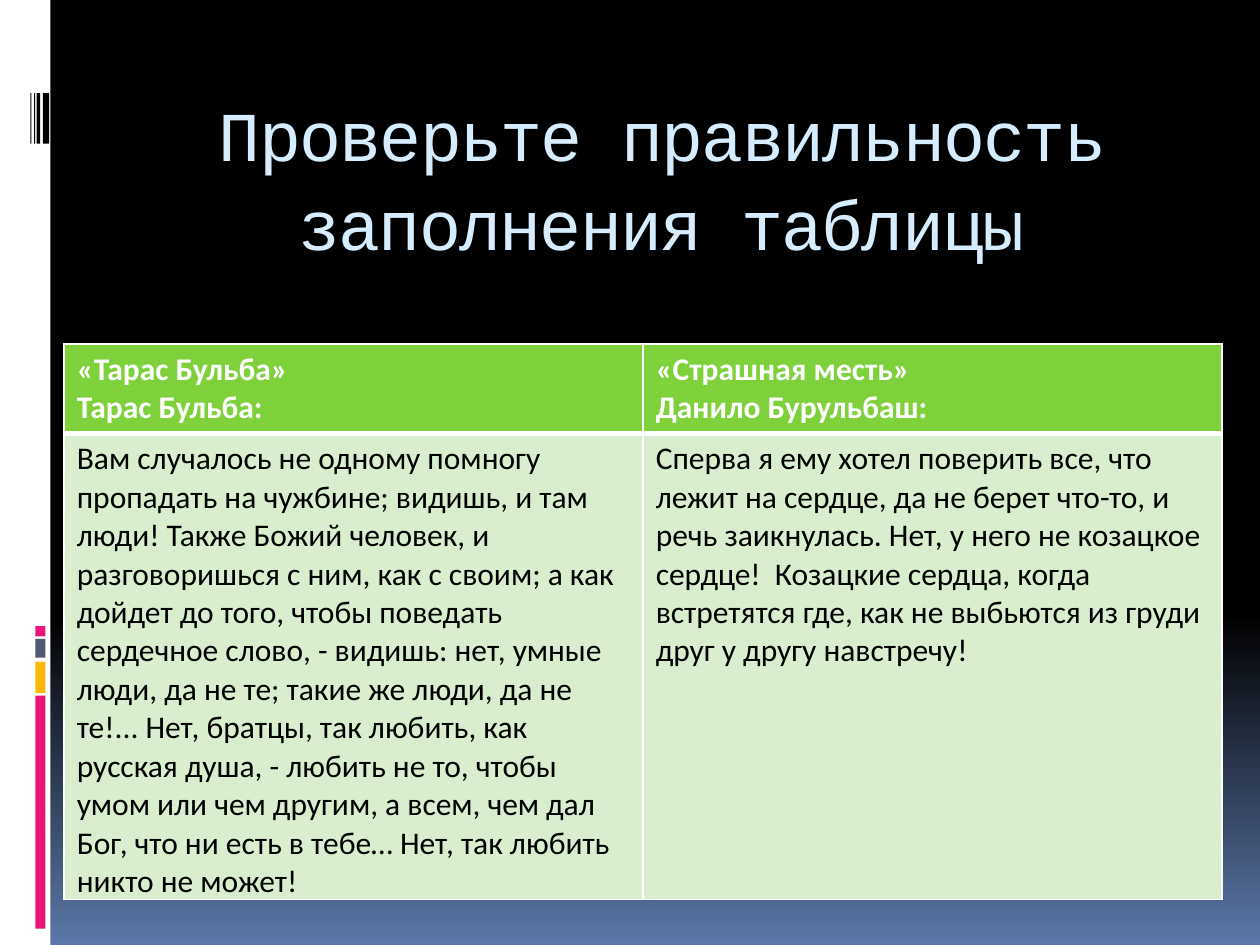
from lxml import etree
from pptx import Presentation
from pptx.dml.color import RGBColor
from pptx.enum import shapes, text
from pptx.oxml import ns
from pptx.util import Inches, Pt

COLORS = {
    "black": "000000", "white": "FFFFFF", "night": "5B77A8",
    "pink": "EA157A", "amber": "FEB80A", "slate": "4E5B6F",
    "title": "D6ECFF", "header": "7FD13B", "body": "D8EECE",
}

COMPARISON = [
    ["«Тарас Бульба»\nТарас Бульба:", "«Страшная месть»\nДанило Бурульбаш:"],
    ["Вам случалось не одному помногу пропадать на чужбине; видишь, и там люди! "
     "Также Божий человек, и разговоришься с ним, как с своим; а как дойдет до того, "
     "чтобы поведать сердечное слово, - видишь: нет, умные люди, да не те; такие же "
     "люди, да не те!... Нет, братцы, так любить, как русская душа, - любить не то, "
     "чтобы умом или чем другим, а всем, чем дал Бог, что ни есть в тебе… Нет, так "
     "любить никто не может!",
     "Сперва я ему хотел поверить все, что лежит на сердце, да не берет что-то, и речь "
     "заикнулась. Нет, у него не козацкое сердце!  Козацкие сердца, когда встретятся "
     "где, как не выбьются из груди друг у другу навстречу!"],
]


def rgb(name):
    """Return the palette colour with this name."""
    return RGBColor.from_string(COLORS[name])


def write(frame, wording, *, font, size, color, bold=False,
          align=text.PP_ALIGN.LEFT, tracking=None, spacing=None):
    """Write each line of the wording as a formatted paragraph."""
    frame.word_wrap = True
    for index, line in enumerate(wording.split("\n")):
        paragraph = frame.add_paragraph() if index else frame.paragraphs[0]
        paragraph.alignment = align
        paragraph.line_spacing = spacing
        run = paragraph.add_run()
        run.text = line
        run.font.name, run.font.size, run.font.bold = font, Pt(size), bold
        run.font.color.rgb = rgb(color)
        if tracking is not None:
            run.font._element.set("spc", str(int(tracking * 100)))


def add_bar(slide, left, top, width, height, color):
    """Add a plain filled rectangle."""
    bar = slide.shapes.add_shape(
        shapes.MSO_SHAPE.RECTANGLE, *map(Inches, (left, top, width, height)))
    bar.shadow.inherit = False
    bar.fill.solid()
    bar.fill.fore_color.rgb = rgb(color)
    bar.line.fill.background()


def paint_background(slide):
    """Fade the background from black to blue at the bottom."""
    fill = slide.background.fill
    fill.gradient()
    fill.gradient_angle = 270
    for stop, position, color in zip(fill.gradient_stops, (0.65, 1), ("black", "night")):
        stop.position = position
        stop.color.rgb = rgb(color)


def add_side_strip(slide, left, top, width, height):
    """Draw the white strip with its coloured blocks and black stripes."""
    add_bar(slide, left, top, width, height, "white")
    for offset, length, color in ((5.52, 1.85, "pink"), (5.25, 0.25, "amber"),
                                  (5.07, 0.15, "slate"), (4.97, 0.08, "pink")):
        add_bar(slide, left + 0.28, top + offset, 0.08, length, color)
    for offset, thickness in ((0.34, 0.05), (0.29, 0.03), (0.27, 0.01), (0.24, 0.01)):
        add_bar(slide, left + offset, top + 0.74, thickness, 0.4, "black")


def add_title(slide, left, top, width, height):
    """Place the slide title."""
    title = slide.shapes.add_textbox(*map(Inches, (left, top, width, height)))
    title.text_frame.margin_top = Inches(0.13)
    write(title.text_frame, "Проверьте правильность заполнения таблицы",
          font="Courier New", size=40, color="title",
          align=text.PP_ALIGN.CENTER, tracking=-1, spacing=1.06)


def set_borders(cell, **widths):
    """Give the cell white borders of the given widths, ahead of its fill."""
    properties = cell._tc.get_or_add_tcPr()
    for index, (side, width) in enumerate(widths.items()):
        line = etree.Element(ns.qn(f"a:ln{side}"), w=str(Pt(width)))
        solid = etree.SubElement(line, ns.qn("a:solidFill"))
        etree.SubElement(solid, ns.qn("a:srgbClr"), val=COLORS["white"])
        properties.insert(index, line)


def add_comparison(slide, left, top, width, height):
    """Build the two-column table of quotations."""
    table = slide.shapes.add_table(
        2, 2, *map(Inches, (left, top, width, height))).table
    header_height = 0.71
    table.rows[0].height = Inches(header_height)
    table.rows[1].height = Inches(height - header_height)
    for row, quotations in enumerate(COMPARISON):
        header = row == 0
        for column, quotation in enumerate(quotations):
            cell = table.cell(row, column)
            cell.fill.solid()
            cell.fill.fore_color.rgb = rgb("header" if header else "body")
            set_borders(cell, L=1, R=1, T=1 if header else 3, B=3 if header else 1)
            write(cell.text_frame, quotation, font="Calibri", size=18,
                  color="white" if header else "black", bold=header)


def main():
    """Build and save the slide."""
    deck = Presentation()
    deck.slide_width, deck.slide_height = Inches(10), Inches(7.5)
    slide = deck.slides.add_slide(deck.slide_layouts[6])
    paint_background(slide)
    add_side_strip(slide, 0, 0, 0.4, 7.5)
    add_title(slide, 1, 0.56, 8.5, 1)
    add_comparison(slide, 0.51, 2.73, 9.19, 4.4)
    deck.save("out.pptx")


if __name__ == "__main__":
    main()
